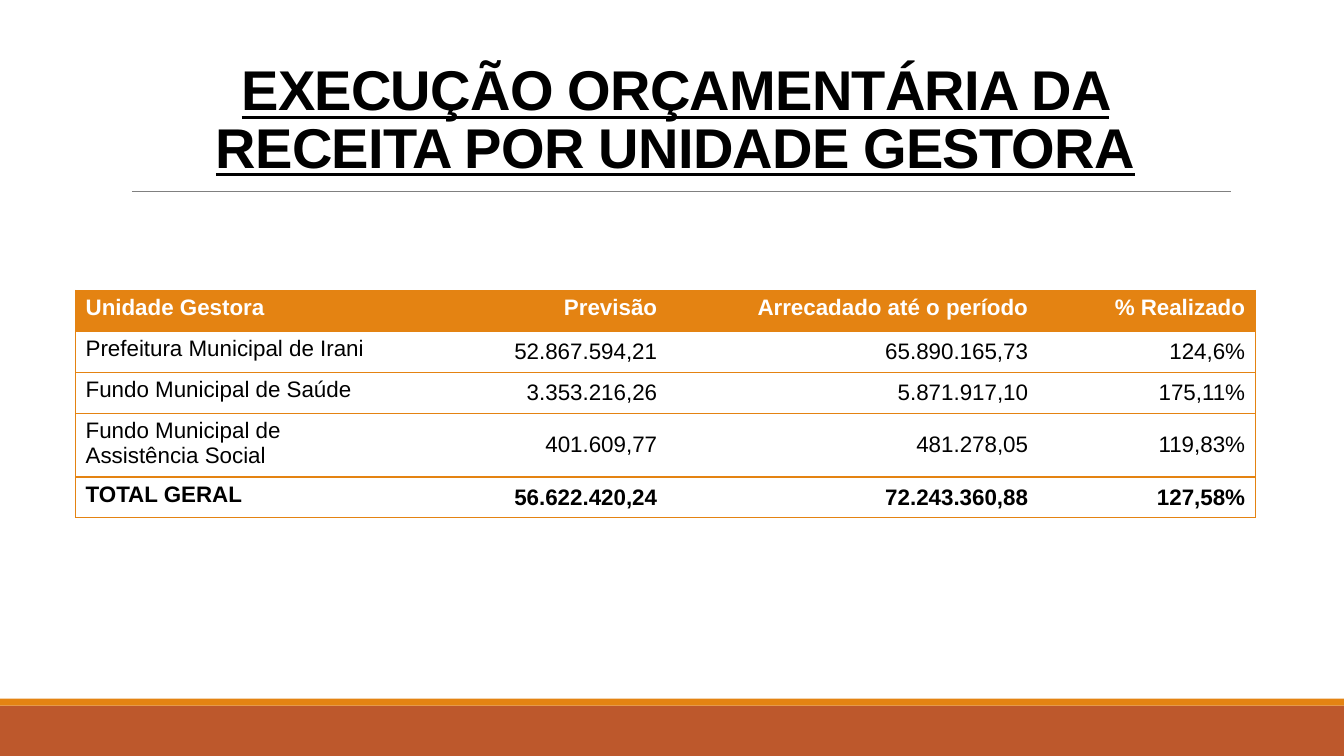
from lxml.etree import SubElement
from pptx import Presentation
from pptx.dml.color import RGBColor
from pptx.enum.shapes import MSO_CONNECTOR, MSO_SHAPE
from pptx.enum.text import MSO_ANCHOR, PP_ALIGN
from pptx.oxml.ns import qn
from pptx.util import Pt

COLORS = {
    "rust": "BD582C",
    "orange": "E48312",
    "gray": "808080",
    "black": "000000",
    "white": "FFFFFF",
}


def color(name):
    return RGBColor.from_string(COLORS[name])


def add_border(cell, edge, visible):
    line = SubElement(cell._tc.get_or_add_tcPr(), qn(f"a:{edge}"), w=str(Pt(1)))
    if visible:
        fill = SubElement(line, qn("a:solidFill"))
        SubElement(fill, qn("a:srgbClr"), val=COLORS["orange"])
    else:
        SubElement(line, qn("a:noFill"))


presentation = Presentation()
presentation.slide_width = Pt(960)
presentation.slide_height = Pt(540)
slide = presentation.slides.add_slide(presentation.slide_layouts[6])

for top, height, name in [(504, 36, "rust"), (499, 5, "orange")]:
    band = slide.shapes.add_shape(MSO_SHAPE.RECTANGLE, 0, Pt(top), Pt(960), Pt(height))
    band.shadow.inherit = False
    band.fill.solid()
    band.fill.fore_color.rgb = color(name)
    band.line.fill.background()

rule = slide.shapes.add_connector(
    MSO_CONNECTOR.STRAIGHT, Pt(94.3), Pt(136.7), Pt(879), Pt(136.7)
)
rule.line.color.rgb = color("gray")
rule.line.width = Pt(0.5)
SubElement(rule._element.spPr, qn("a:effectLst"))

title = slide.shapes.add_textbox(Pt(86.4), Pt(22.4), Pt(792), Pt(109.4))
title_frame = title.text_frame
title_frame.word_wrap = True
title_frame.vertical_anchor = MSO_ANCHOR.BOTTOM
title_frame.text = "EXECUÇÃO ORÇAMENTÁRIA DA RECEITA POR UNIDADE GESTORA"
paragraph = title_frame.paragraphs[0]
paragraph.alignment = PP_ALIGN.CENTER
paragraph.line_spacing = 0.85
font = paragraph.runs[0].font
font.name = "Arial"
font.size = Pt(40)
font.bold = True
font.underline = True
font.color.rgb = color("black")
paragraph.runs[0]._r.get_or_add_rPr().set("spc", "-50")

rows = [
    ("Unidade Gestora", "Previsão", "Arrecadado até o período", "% Realizado"),
    ("Prefeitura Municipal de Irani", "52.867.594,21", "65.890.165,73", "124,6%"),
    ("Fundo Municipal de Saúde", "3.353.216,26", "5.871.917,10", "175,11%"),
    ("Fundo Municipal de Assistência Social", "401.609,77", "481.278,05", "119,83%"),
    ("TOTAL GERAL", "56.622.420,24", "72.243.360,88", "127,58%"),
]
column_widths = [213.8, 208.8, 265, 155]
row_heights = [29.2, 29.2, 29.2, 43, 29.2]

table = slide.shapes.add_table(
    len(rows), len(column_widths), Pt(54), Pt(207.5),
    Pt(sum(column_widths)), Pt(sum(row_heights)),
).table
table.first_row = False
table.horz_banding = False
for column, width in zip(table.columns, column_widths):
    column.width = Pt(width)
for row, height in zip(table.rows, row_heights):
    row.height = Pt(height)

for row_index, values in enumerate(rows):
    is_header = row_index == 0
    is_total = row_index == len(rows) - 1
    for column_index, value in enumerate(values):
        cell = table.cell(row_index, column_index)
        cell.text_frame.text = value
        if column_index > 0 and not is_header:
            cell.vertical_anchor = MSO_ANCHOR.MIDDLE
        paragraph = cell.text_frame.paragraphs[0]
        paragraph.alignment = PP_ALIGN.RIGHT if column_index else PP_ALIGN.LEFT
        font = paragraph.runs[0].font
        font.name = "Arial"
        font.size = Pt(16)
        font.bold = is_header or is_total
        font.color.rgb = color("white" if is_header else "black")
        add_border(cell, "lnL", column_index == 0)
        add_border(cell, "lnR", column_index == len(values) - 1)
        add_border(cell, "lnT", True)
        add_border(cell, "lnB", True)
        if is_header:
            cell.fill.solid()
            cell.fill.fore_color.rgb = color("orange")
        else:
            cell.fill.background()

presentation.save("out.pptx")
